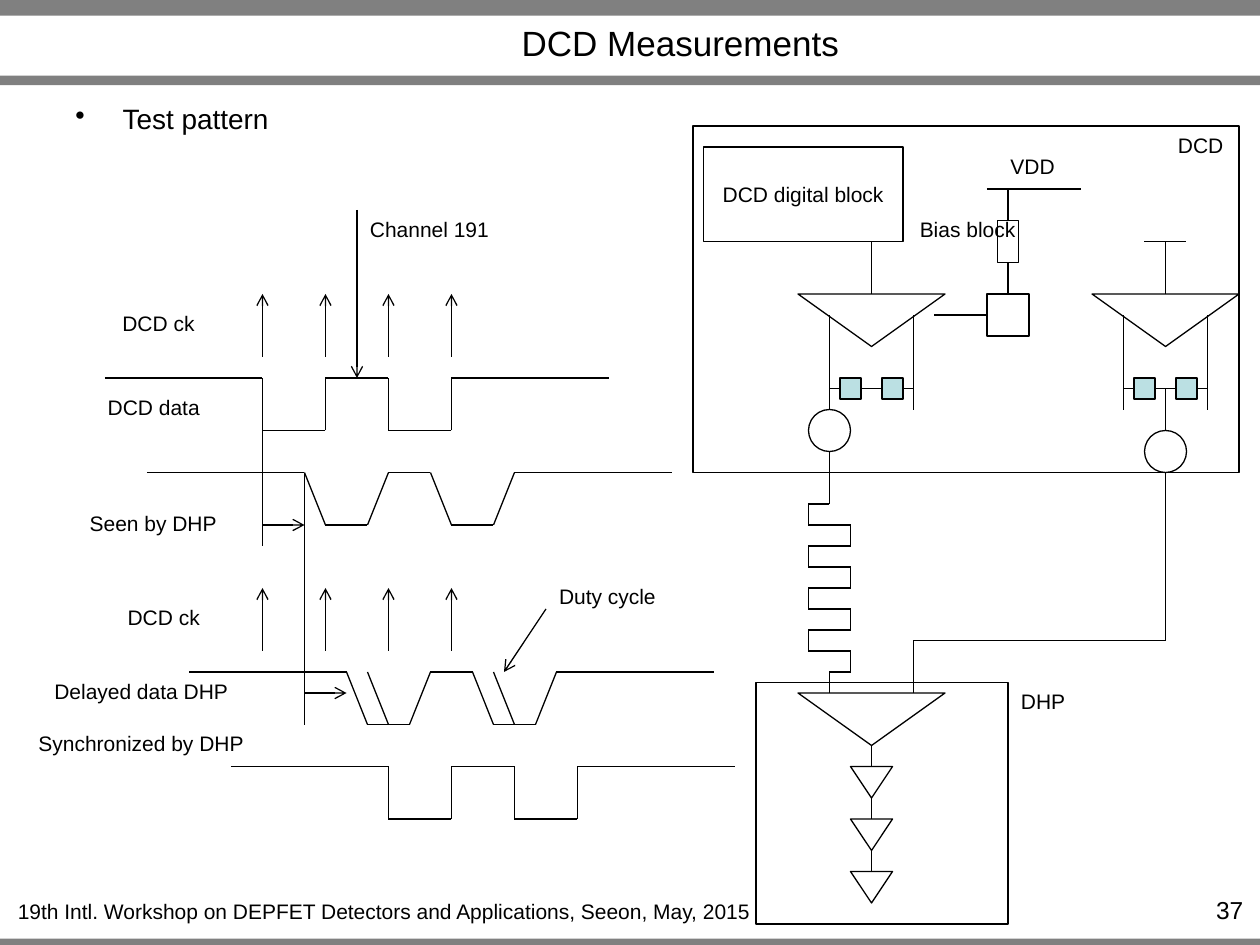
from dataclasses import dataclass
from itertools import pairwise

from lxml import etree
from pptx import Presentation
from pptx import util as u
from pptx.dml.color import RGBColor
from pptx.enum import shapes, text
from pptx.oxml import ns

PX = 7620
Point = tuple[int, int]
Kind = shapes.MSO_SHAPE
Align = text.PP_ALIGN
Anchor = text.MSO_ANCHOR


@dataclass(frozen=True)
class Theme:
    font: str = "Arial"
    ink: str = "000000"
    bar: str = "808080"
    pad: str = "BBE0E3"
    small: int = 12
    page: int = 14
    body: int = 16
    title: int = 20
    rule: float = 0.75


@dataclass(frozen=True)
class Box:
    x: int
    y: int
    w: int
    h: int


@dataclass(frozen=True)
class Label:
    words: str
    box: Box


@dataclass(frozen=True)
class Wave:
    x: int
    y: int
    slope: int


@dataclass(frozen=True)
class Cell:
    x: int
    ball: Box


LOOK = Theme()

LABELS = [
    Label("DCD ck", Box(104, 290, 94, 36)),
    Label("DCD data", Box(90, 370, 113, 36)),
    Label("Seen by DHP", Box(73, 480, 146, 36)),
    Label("Delayed data DHP", Box(39, 640, 191, 36)),
    Label("Synchronized by DHP", Box(24, 690, 221, 36)),
    Label("VDD", Box(950, 140, 67, 36)),
    Label("Channel 191", Box(340, 200, 138, 36)),
    Label("DCD ck", Box(109, 570, 94, 36)),
    Label("Bias block", Box(863, 200, 117, 36)),
    Label("DCD", Box(1110, 120, 67, 36)),
    Label("DHP", Box(960, 650, 67, 36)),
    Label("Duty cycle", Box(520, 550, 117, 36)),
    Label("19th Intl. Workshop on DEPFET Detectors and Applications, "
          "Seeon, May, 2015", Box(2, 850, 728, 36)),
]
WAVES = [Wave(100, 360, 0), Wave(140, 450, 20),
         Wave(180, 640, 20), Wave(220, 730, 0)]
CELLS = [Cell(760, Box(770, 390, 40, 40)), Cell(1040, Box(1090, 410, 40, 40))]
ARROWS = [
    [(250, 500), (290, 500)],
    [(290, 660), (330, 660)],
    [(340, 200), (340, 360)],
    [(520, 580), (480, 640)],
]
WIRES = [
    [(250, 410), (250, 520)],
    [(290, 450), (290, 690)],
    [(350, 640), (370, 690)],
    [(470, 640), (490, 690)],
    [(960, 180), (960, 210)],
    [(960, 250), (960, 280)],
    [(940, 300), (890, 300)],
    [(940, 180), (1030, 180)],
    [(1090, 230), (1130, 230)],
    [(1110, 370), (1110, 410)],
    [(870, 660), (870, 610), (1110, 610), (1110, 450)],
]


def tint(code: str) -> RGBColor:
    return RGBColor.from_string(code)


def place(box: Box) -> list[int]:
    return [n * PX for n in (box.x, box.y, box.w, box.h)]


def write(frame, words: str, size: int, align=Align.CENTER):
    para = frame.paragraphs[0]
    para.alignment = align
    run = para.add_run()
    run.text = words
    run.font.name = LOOK.font
    run.font.size = u.Pt(size)
    run.font.color.rgb = tint(LOOK.ink)
    return para


def note(slide, words: str, box: Box, size: int, align=Align.CENTER,
         wrap: bool = True, anchor=Anchor.TOP):
    frame = slide.shapes.add_textbox(*place(box)).text_frame
    frame.word_wrap = wrap
    frame.vertical_anchor = anchor
    if not wrap:
        frame.auto_size = text.MSO_AUTO_SIZE.SHAPE_TO_FIT_TEXT
    return write(frame, words, size, align)


def draw(slide, kind, box: Box, fill: str = "", edge: bool = True):
    shape = slide.shapes.add_shape(kind, *place(box))
    shape.shadow.inherit = False
    if fill:
        shape.fill.solid()
        shape.fill.fore_color.rgb = tint(fill)
    else:
        shape.fill.background()
    if edge:
        shape.line.color.rgb = tint(LOOK.ink)
        shape.line.width = u.Pt(LOOK.rule)
    else:
        shape.line.fill.background()
    return shape


def wedge(slide, box: Box) -> None:
    draw(slide, Kind.ISOSCELES_TRIANGLE, box).rotation = 180


def trace(slide, dots: list[Point], arrow: bool = False) -> None:
    for (x, y), (p, q) in pairwise(dots):
        wire = slide.shapes.add_connector(
            shapes.MSO_CONNECTOR.STRAIGHT, x * PX, y * PX, p * PX, q * PX)
        wire.line.color.rgb = tint(LOOK.ink)
        wire.line.width = u.Pt(LOOK.rule)
        props = wire._element.spPr
        if arrow:
            etree.SubElement(props.find(ns.qn("a:ln")),
                             ns.qn("a:tailEnd"), type="arrow")
        etree.SubElement(props, ns.qn("a:effectLst"))


def pulse(slide, wave: Wave) -> None:
    top, low = wave.y, wave.y + 50
    dots = [(wave.x, top)]
    for x in (wave.x + 150, wave.x + 270):
        dots += [(x, top), (x + wave.slope, low),
                 (x + 60, low), (x + 60 + wave.slope, top)]
    trace(slide, dots + [(wave.x + 480 + (20 if wave.slope else 0), top)])


def clock(slide, y: int) -> None:
    for x in range(250, 431, 60):
        trace(slide, [(x, y), (x, y - 60)], True)


def amp(slide, cell: Cell) -> None:
    left, mid, right = cell.x + 30, cell.x + 70, cell.x + 110
    wedge(slide, Box(cell.x, 280, 140, 50))
    trace(slide, [(mid, 230), (mid, 280)])
    trace(slide, [(left, 370), (right, 370)])
    for x in (left, right):
        trace(slide, [(x, 300), (x, 390)])
    for x in (left + 10, right - 30):
        draw(slide, Kind.RECTANGLE, Box(x, 360, 20, 20), LOOK.pad)
    draw(slide, Kind.OVAL, cell.ball)


def coil(slide) -> None:
    dots = [(790, 430), (790, 480)]
    for y in range(480, 601, 40):
        dots += [(770, y), (770, y + 20), (810, y + 20), (810, y + 40)]
    trace(slide, dots + [(790, 640), (790, 660)])


def chain(slide) -> None:
    wedge(slide, Box(760, 660, 140, 50))
    for y in (730, 780, 830):
        trace(slide, [(830, y - 20), (830, y)])
        wedge(slide, Box(810, y, 40, 30))


def frame(slide) -> None:
    for y, h in ((894, 6), (0, 15), (72, 9)):
        draw(slide, Kind.RECTANGLE, Box(0, y, 1200, h), LOOK.bar, False)
    note(slide, "DCD Measurements", Box(156, 17, 984, 46), LOOK.title,
         anchor=Anchor.MIDDLE)
    para = note(slide, "Test pattern", Box(60, 91, 1080, 130), LOOK.body,
                Align.LEFT)
    props = para._p.get_or_add_pPr()
    props.set("marL", str(45 * PX))
    props.set("indent", str(-45 * PX))
    etree.SubElement(props, ns.qn("a:buChar"), char="•")
    note(slide, "37", Box(1092, 847, 104, 29), LOOK.page, Align.RIGHT)


def main() -> None:
    deck = Presentation()
    deck.slide_width, deck.slide_height = 1200 * PX, 900 * PX
    slide = deck.slides.add_slide(deck.slide_layouts[6])
    frame(slide)
    for wave in WAVES:
        pulse(slide, wave)
    for y in (340, 620):
        clock(slide, y)
    for dots in ARROWS:
        trace(slide, dots, True)
    for dots in WIRES:
        trace(slide, dots)
    for cell in CELLS:
        amp(slide, cell)
    coil(slide)
    chain(slide)
    for box in (Box(950, 210, 20, 40), Box(940, 280, 40, 40),
                Box(660, 120, 520, 330), Box(720, 650, 240, 230)):
        draw(slide, Kind.RECTANGLE, box)
    block = draw(slide, Kind.RECTANGLE, Box(670, 140, 190, 90)).text_frame
    block.vertical_anchor = Anchor.MIDDLE
    write(block, "DCD digital block", LOOK.small)
    for tag in LABELS:
        note(slide, tag.words, tag.box, LOOK.small, wrap=False)
    deck.save("out.pptx")


if __name__ == "__main__":
    main()
